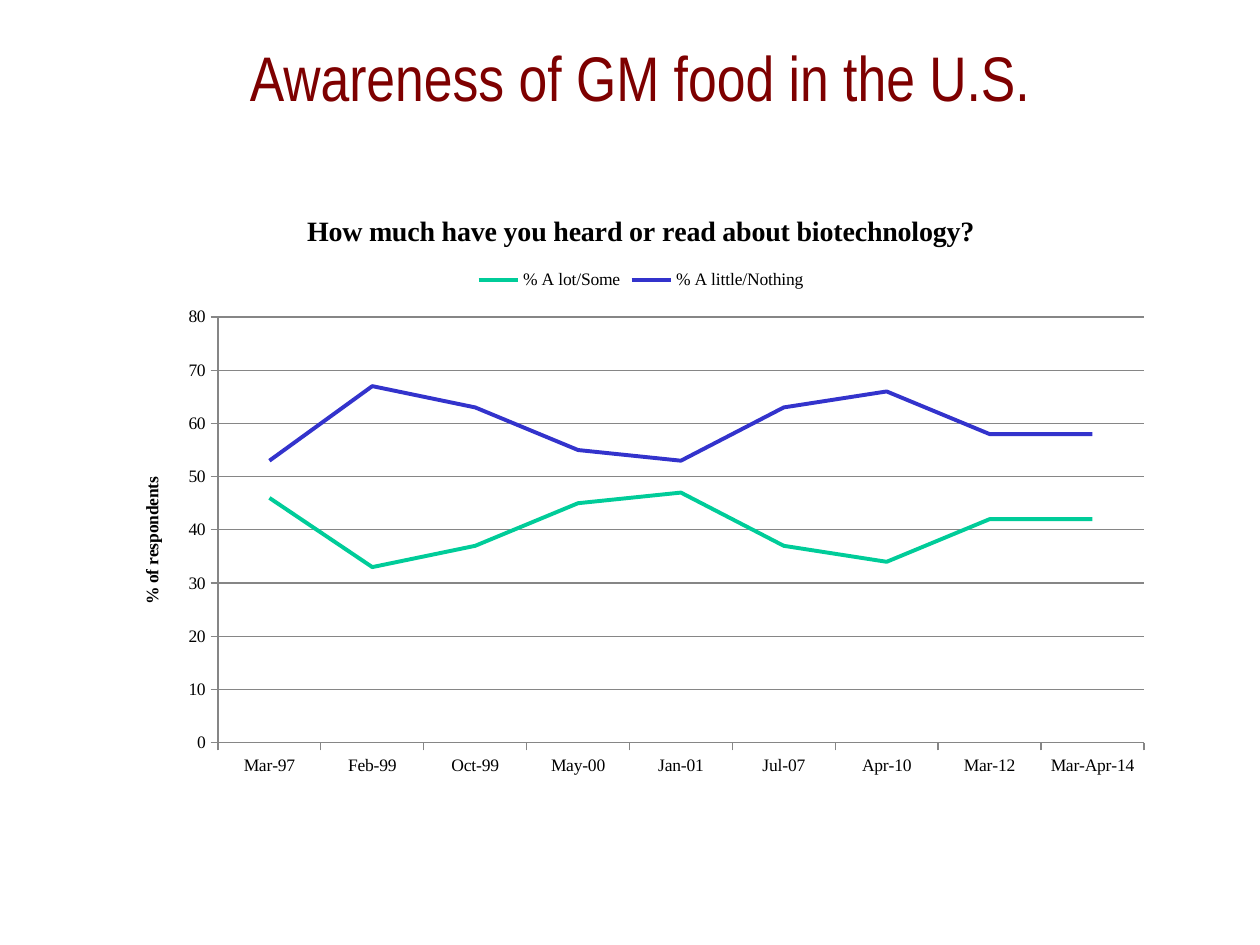
from dataclasses import dataclass

from lxml.etree import SubElement
from pptx import Presentation
from pptx.chart.axis import ValueAxis
from pptx.chart.chart import Chart
from pptx.chart.data import CategoryChartData
from pptx.dml.color import RGBColor
from pptx.enum.chart import XL_CHART_TYPE, XL_LEGEND_POSITION, XL_TICK_MARK
from pptx.enum.text import MSO_ANCHOR, MSO_AUTO_SIZE, PP_ALIGN
from pptx.oxml.ns import qn
from pptx.text.text import Font
from pptx.util import Emu, Inches, Pt

PX_PER_INCH = 126


@dataclass(frozen=True)
class Theme:
    heading: str = "7E0000"
    ink: str = "000000"
    rule: str = "868686"
    heading_font: str = "Arial Narrow"
    chart_font: str = "Times New Roman"
    heading_size: int = 36
    chart_title_size: int = 16
    label_size: int = 10
    series_width: float = 2.25
    rule_width: float = 0.75


@dataclass(frozen=True)
class Box:
    """A rectangle in px."""
    left: int
    top: int
    width: int
    height: int

    def emu(self) -> tuple[Emu, ...]:
        return tuple(px(n) for n in (self.left, self.top, self.width, self.height))


@dataclass(frozen=True)
class Answer:
    name: str
    shares: tuple[int, ...]
    color: str


THEME = Theme()
TITLE_BOX = Box(73, 32, 1134, 157)
CHART_BOX = Box(116, 189, 1050, 598)
PLOT_BOX = Box(218, 317, 926, 426)
SURVEYS = ("Mar-97", "Feb-99", "Oct-99", "May-00", "Jan-01",
           "Jul-07", "Apr-10", "Mar-12", "Mar-Apr-14")
ANSWERS = (
    Answer("% A lot/Some", (46, 33, 37, 45, 47, 37, 34, 42, 42), "00CC99"),
    Answer("% A little/Nothing", (53, 67, 63, 55, 53, 63, 66, 58, 58), "3333CC"),
)


def px(length: int) -> Emu:
    return Emu(round(length * Inches(1) / PX_PER_INCH))


def style_font(font: Font, *, name: str, size: int, color: str, bold: bool = False) -> None:
    font.name = name
    font.size = Pt(size)
    font.bold = bold
    font.color.rgb = RGBColor.from_string(color)


def write(frame, text: str, **style) -> None:
    """Put one centred, formatted paragraph into a text frame."""
    para = frame.paragraphs[0]
    para.alignment = PP_ALIGN.CENTER
    span = para.add_run()
    span.text = text
    style_font(span.font, **style)


def style_line(line, color: str, width: float) -> None:
    line.color.rgb = RGBColor.from_string(color)
    line.width = Pt(width)


def place_plot(chart: Chart) -> None:
    """Fix the inner plot area inside the chart frame."""
    plot_area = chart._chartSpace.find(".//" + qn("c:plotArea"))
    layout = plot_area.find(qn("c:layout"))
    if layout is None:
        layout = SubElement(plot_area, qn("c:layout"))
        plot_area.insert(0, layout)
    manual = SubElement(layout, qn("c:manualLayout"))
    settings = {
        "layoutTarget": "inner",
        "xMode": "edge",
        "yMode": "edge",
        "x": (PLOT_BOX.left - CHART_BOX.left) / CHART_BOX.width,
        "y": (PLOT_BOX.top - CHART_BOX.top) / CHART_BOX.height,
        "w": PLOT_BOX.width / CHART_BOX.width,
        "h": PLOT_BOX.height / CHART_BOX.height,
    }
    for tag, value in settings.items():
        SubElement(manual, qn(f"c:{tag}")).set("val", str(value))


def style_value_axis(axis: ValueAxis) -> None:
    axis.minimum_scale, axis.maximum_scale, axis.major_unit = 0, 80, 10
    axis.has_major_gridlines = True
    style_line(axis.major_gridlines.format.line, THEME.rule, THEME.rule_width)
    frame = axis.axis_title.text_frame
    write(frame, "% of respondents", name=THEME.chart_font,
          size=THEME.label_size, color=THEME.ink, bold=True)
    body = frame._txBody.find(qn("a:bodyPr"))
    body.set("rot", "-5400000")
    body.set("vert", "horz")


def add_awareness_chart(slide) -> None:
    data = CategoryChartData(number_format="General")
    data.categories = SURVEYS
    for answer in ANSWERS:
        data.add_series(answer.name, answer.shares)
    chart = slide.shapes.add_chart(XL_CHART_TYPE.LINE, *CHART_BOX.emu(), data).chart
    style_font(chart.font, name=THEME.chart_font, size=THEME.label_size, color=THEME.ink)
    write(chart.chart_title.text_frame,
          "How much have you heard or read about biotechnology?",
          name=THEME.chart_font, size=THEME.chart_title_size, color=THEME.ink, bold=True)
    chart.has_legend = True
    chart.legend.position = XL_LEGEND_POSITION.TOP
    chart.legend.include_in_layout = False
    for axis in (chart.category_axis, chart.value_axis):
        axis.major_tick_mark = XL_TICK_MARK.OUTSIDE
        axis.minor_tick_mark = XL_TICK_MARK.NONE
        style_line(axis.format.line, THEME.rule, THEME.rule_width)
    style_value_axis(chart.value_axis)
    chart.plots[0].vary_by_categories = False
    for series, answer in zip(chart.plots[0].series, ANSWERS):
        series.smooth = False
        style_line(series.format.line, answer.color, THEME.series_width)
    place_plot(chart)


def add_title(slide) -> None:
    title = slide.shapes.title
    title.left, title.top, title.width, title.height = TITLE_BOX.emu()
    frame = title.text_frame
    frame.word_wrap = True
    frame.auto_size = MSO_AUTO_SIZE.NONE
    frame.vertical_anchor = MSO_ANCHOR.TOP
    write(frame, "Awareness of GM food in the U.S.", name=THEME.heading_font,
          size=THEME.heading_size, color=THEME.heading)


def main() -> None:
    deck = Presentation()
    deck.slide_width, deck.slide_height = Inches(10), Inches(7.5)
    slide = deck.slides.add_slide(deck.slide_layouts.get_by_name("Title Only"))
    add_title(slide)
    add_awareness_chart(slide)
    deck.save("out.pptx")


if __name__ == "__main__":
    main()
